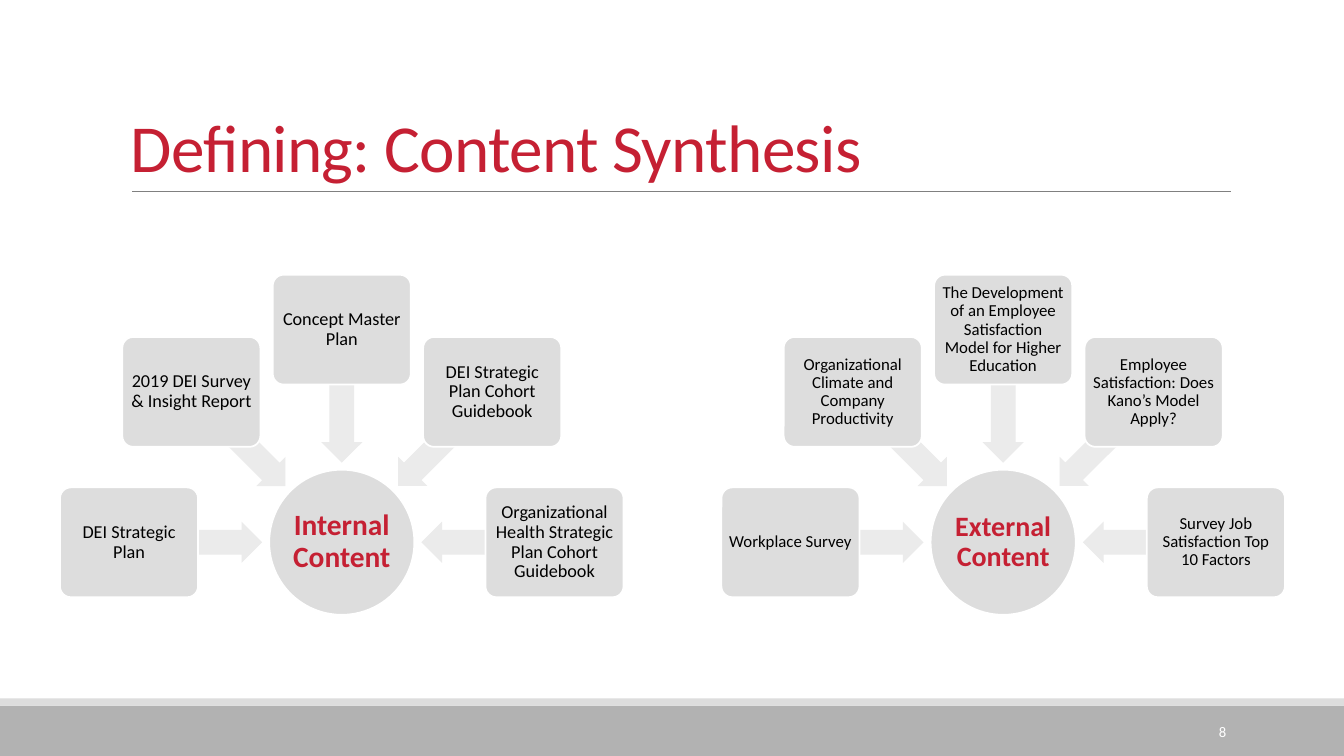
"""Build the content synthesis slide with two hub-and-spoke diagrams."""
from math import cos, radians, sin

from lxml import etree
from pptx import Presentation
from pptx.dml.color import RGBColor
from pptx.enum.shapes import MSO_CONNECTOR, MSO_SHAPE
from pptx.enum.text import MSO_ANCHOR, PP_ALIGN
from pptx.oxml.ns import qn
from pptx.util import Inches, Pt

TITLE = "Defining: Content Synthesis"
PAGE_NUMBER = "8"
DIAGRAMS = [
    {
        "hub": "Internal Content", "hub_size": 21, "source_size": 13, "center": 3.39,
        "sources": [
            "DEI Strategic Plan",
            "2019 DEI Survey & Insight Report",
            "Concept Master Plan",
            "DEI Strategic Plan Cohort Guidebook",
            "Organizational Health Strategic Plan Cohort Guidebook",
        ],
    },
    {
        "hub": "External Content", "hub_size": 20, "source_size": 12, "center": 9.95,
        "sources": [
            "Workplace Survey",
            "Organizational Climate and Company Productivity",
            "The Development of an Employee Satisfaction Model for Higher Education",
            "Employee Satisfaction: Does Kano’s Model Apply?",
            "Survey Job Satisfaction Top 10 Factors",
        ],
    },
]

RED = RGBColor(0xC5, 0x20, 0x33)
BLACK = RGBColor(0, 0, 0)
WHITE = RGBColor(0xFF, 0xFF, 0xFF)
FOOTER_GRAY = RGBColor(0xB2, 0xB2, 0xB2)
BOX_GRAY = RGBColor(0xDD, 0xDD, 0xDD)
ARROW_GRAY = RGBColor(0xEB, 0xEB, 0xEB)
RULE_GRAY = RGBColor(0x80, 0x80, 0x80)

RECTANGLE, ROUNDED = MSO_SHAPE.RECTANGLE, MSO_SHAPE.ROUNDED_RECTANGLE
OVAL, LEFT_ARROW = MSO_SHAPE.OVAL, MSO_SHAPE.LEFT_ARROW
STRAIGHT = MSO_CONNECTOR.STRAIGHT
MIDDLE, BOTTOM = MSO_ANCHOR.MIDDLE, MSO_ANCHOR.BOTTOM
LEFT, CENTER, RIGHT = PP_ALIGN.LEFT, PP_ALIGN.CENTER, PP_ALIGN.RIGHT

FONT = "Calibri"
SLIDE_W, SLIDE_H = 13.33, 7.5
FOOTER_H, STRIPE_H = 0.5, 0.07
HUB_Y, HUB_D = 5.38, 1.44
BOX_W, BOX_H, BOX_RADIUS = 1.37, 1.09, 2.11
ARROW_W, ARROW_H, ARROW_RADIUS = 1.32, 0.41, 1.45


def write(shape, text, size, color, align=CENTER, anchor=MIDDLE, bold=False,
          line_spacing=0.9, inset=None, tracking=None):
    frame = shape.text_frame
    frame.word_wrap = True
    frame.vertical_anchor = anchor
    if inset is not None:
        frame.margin_left = frame.margin_right = Inches(inset)
        frame.margin_top = frame.margin_bottom = Inches(inset)
    paragraph = frame.paragraphs[0]
    paragraph.alignment = align
    paragraph.line_spacing = line_spacing
    run = paragraph.add_run()
    run.text = text
    run.font.name = FONT
    run.font.size = Pt(size)
    run.font.bold = bold
    run.font.color.rgb = color
    if tracking is not None:
        run._r.get_or_add_rPr().set("spc", str(int(tracking * 100)))


def add_block(slide, kind, left, top, width, height, fill, outline=None):
    block = slide.shapes.add_shape(
        kind, Inches(left), Inches(top), Inches(width), Inches(height))
    block.shadow.inherit = False
    block.fill.solid()
    block.fill.fore_color.rgb = fill
    if outline is None:
        block.line.fill.background()
    else:
        block.line.color.rgb = outline
        block.line.width = Pt(1.25)
    return block


def add_centered(slide, kind, x, y, width, height, fill, outline=None):
    return add_block(slide, kind, x - width / 2, y - height / 2, width, height,
                     fill, outline)


def add_textbox(slide, left, top, width, height):
    return slide.shapes.add_textbox(
        Inches(left), Inches(top), Inches(width), Inches(height))


def add_frame(slide):
    footer_top = SLIDE_H - FOOTER_H
    add_block(slide, RECTANGLE, 0, footer_top, SLIDE_W, FOOTER_H, FOOTER_GRAY)
    add_block(slide, RECTANGLE, 0, footer_top - STRIPE_H, SLIDE_W, STRIPE_H, BOX_GRAY)
    rule = slide.shapes.add_connector(
        STRAIGHT, Inches(1.31), Inches(1.9), Inches(12.21), Inches(1.9))
    rule.line.color.rgb = RULE_GRAY
    rule.line.width = Pt(0.5)
    etree.SubElement(rule._element.spPr, qn("a:effectLst"))
    write(add_textbox(slide, 1.2, 0.31, 11, 1.59), TITLE, 48, RED, align=LEFT,
          anchor=BOTTOM, line_spacing=0.85, tracking=-0.5)
    write(add_textbox(slide, 10.83, 7.06, 1.43, 0.4), PAGE_NUMBER, 10.5, WHITE,
          align=RIGHT, line_spacing=1.0)


def add_diagram(slide, diagram):
    hub_x, sources = diagram["center"], diagram["sources"]
    hub = add_centered(slide, OVAL, hub_x, HUB_Y, HUB_D, HUB_D, BOX_GRAY, WHITE)
    write(hub, diagram["hub"], diagram["hub_size"], RED, bold=True, inset=0.01)
    step = 180 / (len(sources) - 1)
    for index, source in enumerate(sources):
        angle = 180 + index * step
        dx, dy = cos(radians(angle)), sin(radians(angle))
        arrow = add_centered(slide, LEFT_ARROW, hub_x + ARROW_RADIUS * dx,
                             HUB_Y + ARROW_RADIUS * dy, ARROW_W, ARROW_H, ARROW_GRAY)
        arrow.adjustments[0], arrow.adjustments[1] = 0.6, 0.5
        arrow.rotation = angle % 360
        box = add_centered(slide, ROUNDED, hub_x + BOX_RADIUS * dx,
                           HUB_Y + BOX_RADIUS * dy, BOX_W, BOX_H, BOX_GRAY, WHITE)
        box.adjustments[0] = 0.1
        write(box, source, diagram["source_size"], BLACK, inset=0.03)


def main():
    deck = Presentation()
    deck.slide_width, deck.slide_height = Inches(SLIDE_W), Inches(SLIDE_H)
    slide = deck.slides.add_slide(deck.slide_layouts[6])
    add_frame(slide)
    for diagram in DIAGRAMS:
        add_diagram(slide, diagram)
    deck.save("out.pptx")


if __name__ == "__main__":
    main()
